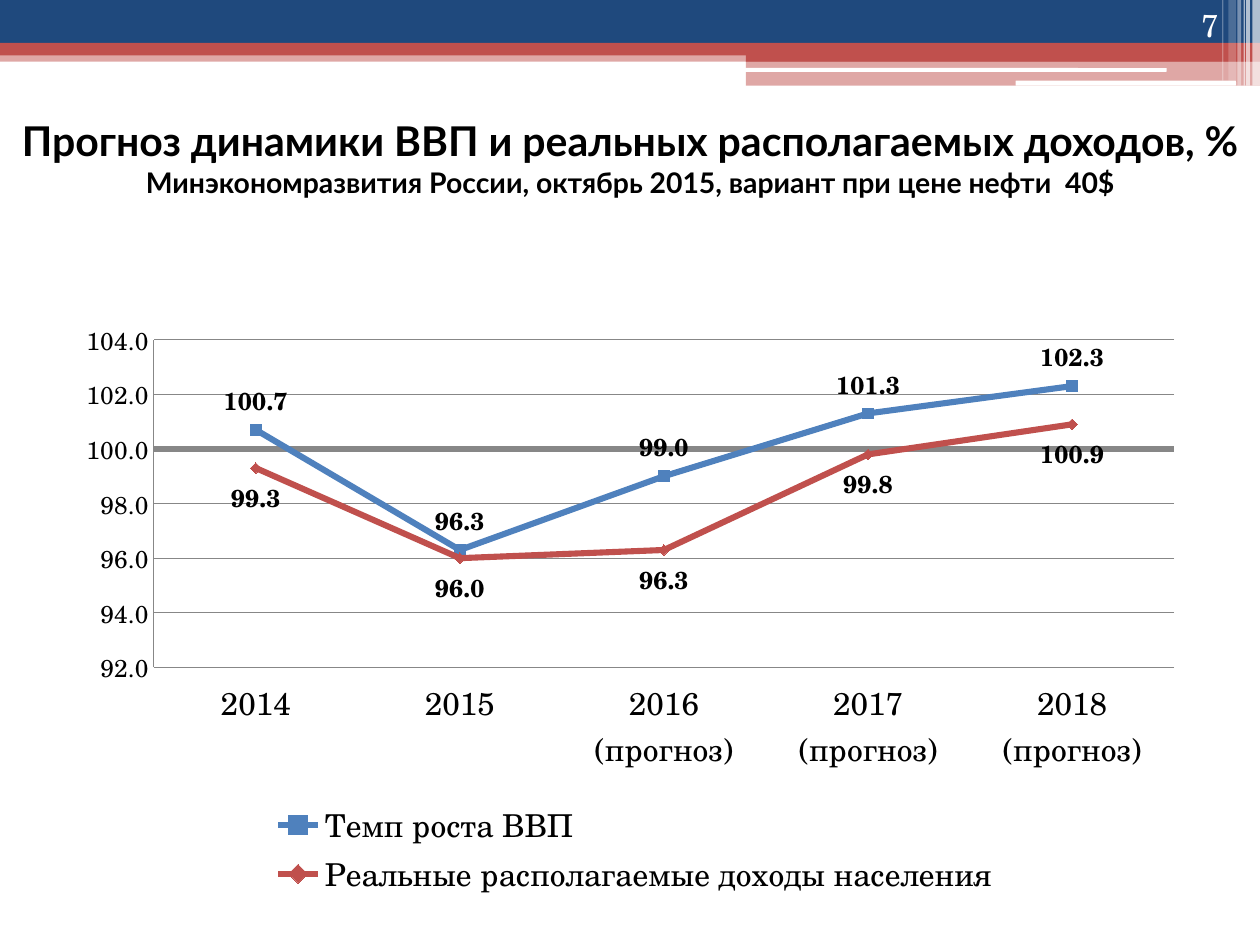
from dataclasses import dataclass

from lxml import etree
from pptx import Presentation
from pptx.chart.data import CategoryChartData
from pptx.dml.color import RGBColor
from pptx.enum.chart import (XL_CHART_TYPE, XL_LABEL_POSITION, XL_LEGEND_POSITION,
                             XL_MARKER_STYLE, XL_TICK_LABEL_POSITION, XL_TICK_MARK)
from pptx.enum.shapes import MSO_SHAPE
from pptx.enum.text import MSO_ANCHOR, PP_ALIGN
from pptx.oxml.ns import qn
from pptx.util import Inches, Pt

RECT, ROUND = MSO_SHAPE.RECTANGLE, MSO_SHAPE.ROUNDED_RECTANGLE
CENTER, RIGHT = PP_ALIGN.CENTER, PP_ALIGN.RIGHT
MIDDLE, BOTTOM = MSO_ANCHOR.MIDDLE, MSO_ANCHOR.BOTTOM
NO_TICK = XL_TICK_MARK.NONE
ABOVE, BELOW = XL_LABEL_POSITION.ABOVE, XL_LABEL_POSITION.BELOW
SQUARE, DIAMOND = XL_MARKER_STYLE.SQUARE, XL_MARKER_STYLE.DIAMOND


@dataclass(frozen=True)
class Theme:
    navy: str = "1F497D"
    red: str = "C0504D"
    blue: str = "4F81BD"
    white: str = "FFFFFF"
    black: str = "000000"
    grey: str = "878787"
    sans: str = "Lato"
    serif: str = "TeX Gyre Schola"
    title: float = 23.4
    sub: float = 16.2
    body: float = 18
    label: float = 14


THEME = Theme()

# left, top, width, height, colour, opacity in percent
BANDS = [
    (0, 0.4, 10, 0.09, THEME.red, 50),
    (0, 0, 10, 0.34, THEME.navy, 100),
    (0, 0.34, 10, 0.1, THEME.red, 100),
    (5.92, 0.39, 4.08, 0.1, THEME.red, 100),
    (5.92, 0.48, 4.08, 0.2, THEME.red, 50),
]
PILLS = [(5.91, 0.54, 3.35, 0.03), (8.06, 0.64, 1.75, 0.04)]
# left, width, height, opacity in percent
STRIPES = [
    (9.94, 0.06, 0.68, 65),
    (9.89, 0.03, 0.68, 65),
    (9.87, 0.01, 0.68, 60),
    (9.82, 0.03, 0.68, 40),
    (9.75, 0.06, 0.64, 20),
    (9.7, 0.01, 0.64, 30),
]

YEARS = ["2014", "2015", "2016 (прогноз)", "2017 (прогноз)", "2018 (прогноз)"]
# name, values, colour, marker, label place
SERIES = [
    ("Темп роста ВВП", (100.7, 96.3, 99, 101.3, 102.3), THEME.blue, SQUARE, ABOVE),
    ("Реальные располагаемые доходы населения", (99.3, 96, 96.3, 99.8, 100.9),
     THEME.red, DIAMOND, BELOW),
]


def rgb(color):
    return RGBColor.from_string(color)


def add_bar(slide, kind, box, color, alpha=100):
    bar = slide.shapes.add_shape(kind, *map(Inches, box))
    bar.shadow.inherit = False
    bar.line.fill.background()
    bar.fill.solid()
    bar.fill.fore_color.rgb = rgb(color)
    if alpha < 100:
        node = bar.fill._xPr.find(".//" + qn("a:srgbClr"))
        etree.SubElement(node, qn("a:alpha"), val=str(alpha * 1000))
    return bar


def add_header(slide):
    for *box, color, alpha in BANDS:
        add_bar(slide, RECT, box, color, alpha)
    for box in PILLS:
        add_bar(slide, ROUND, box, THEME.white)
    for left, width, height, alpha in STRIPES:
        add_bar(slide, RECT, (left, 0, width, height), THEME.white, alpha)


def set_font(font, size, color=THEME.black, name=THEME.serif, bold=False):
    font.name, font.bold = name, bold
    font.size = Pt(size)
    font.color.rgb = rgb(color)


def add_text(slide, box, lines, align, anchor, color, name, bold=False):
    """Put (text, size) lines in one paragraph, parted by line breaks."""
    frame = slide.shapes.add_textbox(*map(Inches, box)).text_frame
    frame.word_wrap = True
    frame.vertical_anchor = anchor
    para = frame.paragraphs[0]
    para.alignment = align
    set_font(para.font, lines[0][1], color, name, bold)
    for i, (text, size) in enumerate(lines):
        if i:
            para.add_line_break()
        run = para.add_run()
        run.text = text
        run.font.size = Pt(size)


def set_layout(parent, index, box, inner=False):
    """Fix a chart part at x, y, w, h, given as fractions of the chart."""
    for old in parent.findall(qn("c:layout")):
        parent.remove(old)
    layout = etree.Element(qn("c:layout"))
    manual = etree.SubElement(layout, qn("c:manualLayout"))
    if inner:
        etree.SubElement(manual, qn("c:layoutTarget"), val="inner")
    for side in "xy":
        etree.SubElement(manual, qn(f"c:{side}Mode"), val="edge")
    for side, value in zip("xywh", box):
        etree.SubElement(manual, qn(f"c:{side}"), val=str(value))
    parent.insert(index, layout)


def style_line(line, color, width):
    line.color.rgb = rgb(color)
    line.width = Pt(width)


def style_axes(chart):
    years, values = chart.category_axis, chart.value_axis
    years.tick_label_position = XL_TICK_LABEL_POSITION.LOW
    years.major_tick_mark = values.major_tick_mark = NO_TICK
    style_line(years.format.line, THEME.grey, 3.5)
    set_font(years.tick_labels.font, THEME.body)
    values.minimum_scale, values.maximum_scale = 92, 104
    values.major_unit = 2
    values.crosses_at = 100
    style_line(values.format.line, THEME.grey, 0.75)
    style_line(values.major_gridlines.format.line, THEME.grey, 0.75)
    set_font(values.tick_labels.font, THEME.label)
    values.tick_labels.number_format = "0.0"
    values.tick_labels.number_format_is_linked = False


def style_series(series, color, marker, place):
    series.smooth = False
    style_line(series.format.line, color, 3.5)
    series.marker.style = marker
    series.marker.size = 6
    series.marker.format.fill.solid()
    series.marker.format.fill.fore_color.rgb = rgb(color)
    series.marker.format.line.color.rgb = rgb(color)
    labels = series.data_labels
    labels.show_value = True
    labels.position = place
    labels.number_format = "0.0"
    labels.number_format_is_linked = False
    set_font(labels.font, THEME.label, bold=True)


def add_graph(slide, box):
    data = CategoryChartData(number_format="0.0")
    data.categories = YEARS
    for name, values, *_ in SERIES:
        data.add_series(name, values)
    chart = slide.shapes.add_chart(
        XL_CHART_TYPE.LINE_MARKERS, *map(Inches, box), data).chart
    chart.has_title = False
    set_font(chart.font, THEME.body)
    chart.plots[0].vary_by_categories = False
    style_axes(chart)
    for series, (_, _, color, marker, place) in zip(chart.plots[0].series, SERIES):
        style_series(series, color, marker, place)
    chart.has_legend = True
    chart.legend.position = XL_LEGEND_POSITION.BOTTOM
    chart.legend.include_in_layout = False
    set_font(chart.legend.font, THEME.body)
    set_layout(chart.legend._element, 1, (0.18, 0.82, 0.65, 0.17))
    area = chart._chartSpace.find(".//" + qn("c:plotArea"))
    set_layout(area, 0, (0.08, 0.05, 0.9, 0.55), inner=True)


def main():
    deck = Presentation()
    deck.slide_width, deck.slide_height = Inches(10), Inches(7.5)
    slide = deck.slides.add_slide(deck.slide_layouts[6])
    add_header(slide)
    title = [
        ("Прогноз динамики ВВП и реальных располагаемых доходов, %", THEME.title),
        ("Минэкономразвития России, октябрь 2015, вариант при цене нефти  40$", THEME.sub),
    ]
    add_text(slide, (0, 0.62, 10, 1.26), title, CENTER, MIDDLE,
             THEME.black, THEME.sans, bold=True)
    add_text(slide, (8.94, 0, 0.83, 0.4), [("7", THEME.body)], RIGHT, BOTTOM,
             THEME.white, THEME.serif)
    add_graph(slide, (0.5, 2.46, 9, 4.73))
    deck.save("out.pptx")


if __name__ == "__main__":
    main()
